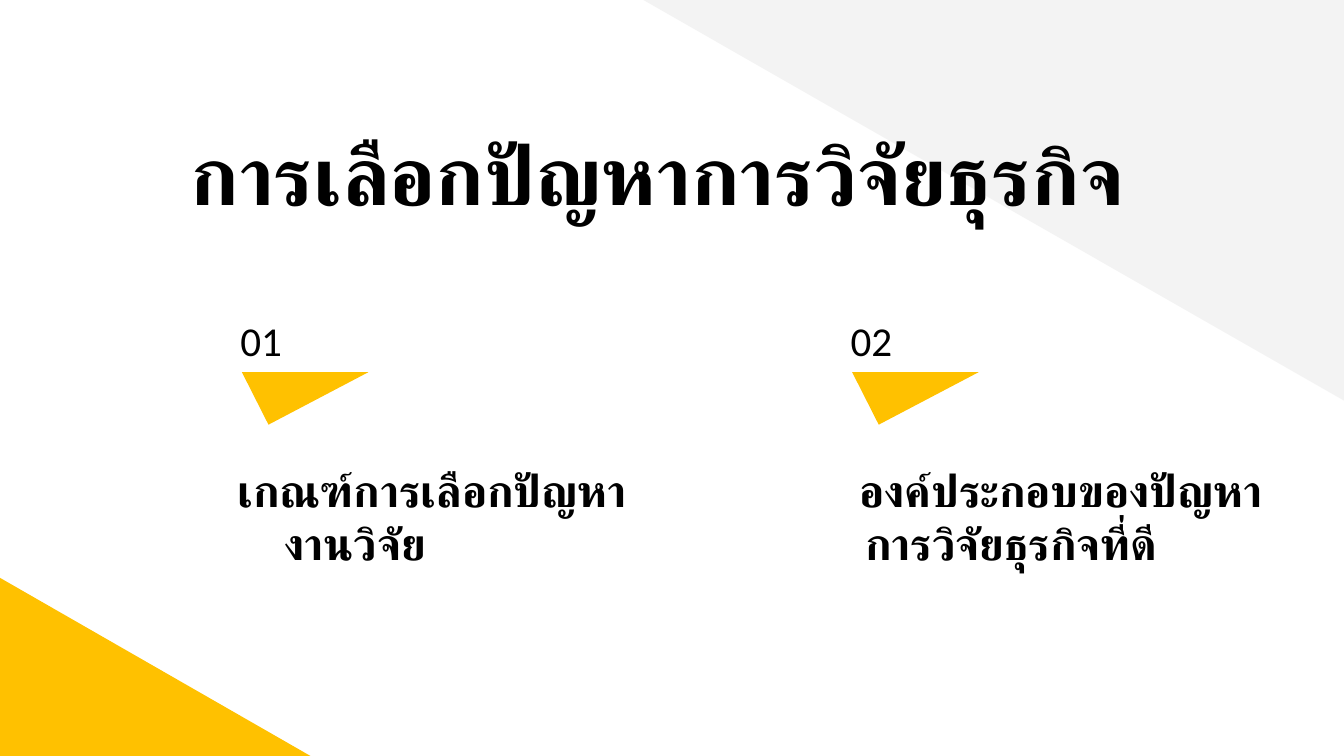
from pptx import Presentation
from pptx.dml.color import RGBColor
from pptx.enum.shapes import MSO_SHAPE as Shape
from pptx.enum.text import MSO_ANCHOR as Anchor, PP_ALIGN as Align
from pptx.util import Pt

BLACK = RGBColor(0x00, 0x00, 0x00)
GREY = RGBColor(0xF3, 0xF3, 0xF3)
YELLOW = RGBColor(0xFF, 0xC1, 0x00)

deck = Presentation()
deck.slide_width, deck.slide_height = Pt(720), Pt(405)
page = deck.slides.add_slide(deck.slide_layouts[6])


def add_triangle(kind, place, color, rotation=0):
    triangle = page.shapes.add_shape(kind, *map(Pt, place))
    triangle.shadow.inherit = False
    triangle.fill.solid()
    triangle.fill.fore_color.rgb = color
    triangle.line.fill.background()
    triangle.rotation = rotation
    return triangle


def add_text(text, place, font, para_format):
    box = page.shapes.add_textbox(*map(Pt, place))
    frame = box.text_frame
    frame.word_wrap = True
    frame.vertical_anchor = Anchor.TOP
    for side in ("left", "top", "right", "bottom"):
        setattr(frame, f"margin_{side}", Pt(7.2))
    para = frame.paragraphs[0]
    for name, value in para_format.items():
        setattr(para, name, value)
    span = para.add_run()
    span.text = text
    for name, value in font.items():
        setattr(span.font, name, value)
    span.font.color.rgb = BLACK
    return para


TITLE_FONT = {"name": "Arial", "size": Pt(44), "bold": True}
TOPIC_FONT = {"name": "Arial", "size": Pt(24), "bold": True}
NUMBER_FONT = {"name": "Calibri", "size": Pt(22), "bold": False}
NUMBER_FORMAT = {"line_spacing": 1.15, "space_after": Pt(16)}

add_triangle(Shape.RIGHT_TRIANGLE, (343.5, -0.7, 376.5, 215.3), GREY, 180)
add_triangle(Shape.RIGHT_TRIANGLE, (0, 309.6, 166.3, 95.4), YELLOW)
add_text("การเลือกปัญหาการวิจัยธุรกิจ", (33.1, 59, 638, 45.4),
         TITLE_FONT, {"alignment": Align.CENTER})

topics = [
    ("01", "เกณฑ์การเลือกปัญหางานวิจัย", 121.7, 109.4, 265.7, 36, -25.2),
    ("02", "องค์ประกอบของปัญหาการวิจัยธุรกิจที่ดี", 448.6, 442.8, 241.9, 13.7, -2.9),
]
for number, topic, left, topic_left, topic_width, margin, indent in topics:
    add_text(number, (left, 157.7, 146.9, 38.9), NUMBER_FONT, NUMBER_FORMAT)
    marker = add_triangle(Shape.ISOSCELES_TRIANGLE, (left + 7.9, 199.4, 67.7, 28.1), YELLOW, 180)
    marker.adjustments[0] = 0.79
    para = add_text(topic, (topic_left, 240.5, topic_width, 78.5), TOPIC_FONT, {})
    properties = para._p.get_or_add_pPr()
    properties.set("marL", str(Pt(margin)))
    properties.set("indent", str(Pt(indent)))

deck.save("out.pptx")
